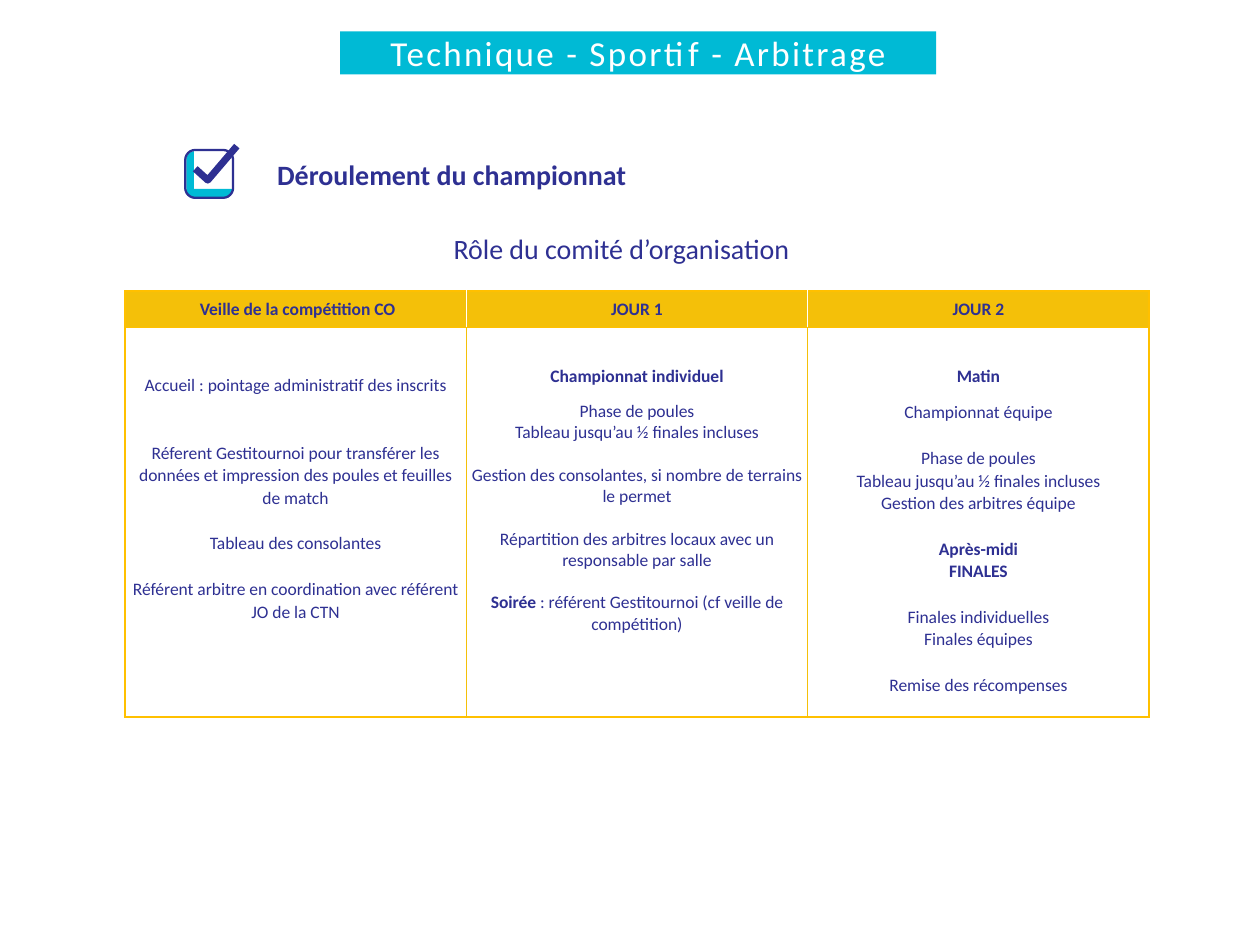
from lxml import etree
from pptx import Presentation
from pptx.dml.color import RGBColor
from pptx.enum.shapes import MSO_SHAPE
from pptx.enum.text import MSO_ANCHOR, PP_ALIGN
from pptx.oxml.ns import qn
from pptx.util import Inches, Pt

CENTER = PP_ALIGN.CENTER
MIDDLE, TOP = MSO_ANCHOR.MIDDLE, MSO_ANCHOR.TOP
NAVY = RGBColor(0x2E, 0x30, 0x92)
CYAN = RGBColor(0x00, 0xBA, 0xD5)
GOLD = RGBColor(0xF4, 0xC0, 0x09)
AMBER = RGBColor(0xFF, 0xC0, 0x00)
WHITE = RGBColor(0xFF, 0xFF, 0xFF)

HEADERS = [" Veille de la compétition CO", "JOUR 1", "JOUR 2"]
LINE = 13  # one line of body text, in points
# Each column: top margin (points), then paragraphs as (space before, line spacing, runs)
COLUMNS = [
    (2 * LINE, [
        (0, 1.07, [("Accueil : pointage administratif des inscrits", False)]),
        (2 * LINE, 1.07, [("Réferent Gestitournoi pour transférer les données et "
                           "impression des poules et feuilles de match", False)]),
        (LINE, 1.07, [("Tableau des consolantes", False)]),
        (LINE, 1.07, [("Référent arbitre en coordination avec référent JO de la CTN", False)]),
    ]),
    (LINE + 8, [
        (0, 1.07, [("Championnat individuel", True)]),
        (8, 1, [("Phase de poules", False)]),
        (0, 1, [("Tableau jusqu’au ½ finales incluses", False)]),
        (12.2, 1, [("Gestion des consolantes, si nombre de terrains le permet", False)]),
        (12.2, 1, [("Répartition des arbitres locaux avec un responsable par salle", False)]),
        (12.2, 1, [("Soirée", True),
                   (" : référent Gestitournoi (cf veille de compétition)", False)]),
    ]),
    (LINE + 8, [
        (0, 1.07, [("Matin", True)]),
        (8, 1.07, [("Championnat équipe", False)]),
        (LINE, 1.07, [("Phase de poules", False)]),
        (0, 1.07, [("Tableau jusqu’au ½ finales incluses", False)]),
        (0, 1.07, [("Gestion des arbitres équipe", False)]),
        (LINE, 1.07, [("Après-midi", True)]),
        (0, 1.07, [("FINALES", True)]),
        (LINE, 1.07, [("Finales individuelles", False)]),
        (0, 1.07, [("Finales équipes", False)]),
        (LINE, 1.07, [("Remise des récompenses", False)]),
    ]),
]


def add_span(para, text, size, color, bold=False):
    span = para.add_run()
    span.text = text
    span.font.name = "Calibri"
    span.font.size = Pt(size)
    span.font.bold = bold
    span.font.color.rgb = color
    return span


def set_borders(cell, borders):
    """Draw (color, points) borders in the order left, right, top, bottom."""
    properties = cell._tc.get_or_add_tcPr()
    for index, (side, (color, points)) in enumerate(zip("LRTB", borders)):
        line = etree.Element(qn(f"a:ln{side}"), w=str(Pt(points)))
        fill = etree.SubElement(line, qn("a:solidFill"))
        etree.SubElement(fill, qn("a:srgbClr"), val=str(color))
        properties.insert(index, line)


deck = Presentation()
deck.slide_width, deck.slide_height = Inches(10), Inches(7.5)
page = deck.slides.add_slide(deck.slide_layouts[6])

# Programme table
table = page.shapes.add_table(2, 3, Inches(0.99), Inches(2.31), Inches(8.13), Inches(3.38)).table
table.first_row = table.horz_banding = False
table.rows[0].height, table.rows[1].height = Inches(0.29), Inches(3.09)
for column in table.columns:
    column.width = Inches(2.71)

header_rows = [(0, [(0, 1.07, [(header, True)])]) for header in HEADERS]
for row, contents in enumerate([header_rows, COLUMNS]):
    inner = (WHITE if row == 0 else GOLD, 0.5)
    outer = (AMBER, 1)
    for col, (top_margin, paragraphs) in enumerate(contents):
        cell = table.cell(row, col)
        cell.margin_left = cell.margin_right = Inches(0.04)
        cell.margin_top, cell.margin_bottom = Pt(top_margin), 0
        cell.vertical_anchor = MIDDLE if row == 0 else TOP
        if row == 0:
            cell.fill.solid()
            cell.fill.fore_color.rgb = GOLD
        else:
            cell.fill.background()
        set_borders(cell, [outer if col == 0 else inner,
                           outer if col == 2 else inner, outer, outer])
        for index, (before, spacing, runs) in enumerate(paragraphs):
            frame = cell.text_frame
            para = frame.paragraphs[0] if index == 0 else frame.add_paragraph()
            para.alignment = CENTER
            para.line_spacing = spacing
            para.space_before = Pt(before)
            for text, bold in runs:
                add_span(para, text, 10, NAVY, bold)

# Checkbox icon: cyan shade, rounded frame, tick; points in hundredths of an inch
SHADE = [(154, 120), (151, 121), (149, 123), (148, 126), (148, 154), (149, 155),
         (151, 156), (153, 157), (181, 157), (184, 153), (185, 150), (154, 150)]
TICK = [(155, 134), (165, 143), (188, 116)]
icon = page.shapes.add_group_shape()
outlines = []
for points, closed in [(SHADE, True), (TICK, False)]:
    builder = icon.shapes.build_freeform(*points[0], scale=Inches(0.01))
    builder.add_line_segments(points[1:], close=closed)
    outlines.append(builder.convert_to_shape())
shade, tick = outlines
frame_box = icon.shapes.add_shape(MSO_SHAPE.ROUNDED_RECTANGLE, Inches(1.47), Inches(1.19),
                                  Inches(0.38), Inches(0.38))
frame_box.adjustments[0] = 0.21
shade.shadow.inherit = False
shade.fill.solid()
shade.fill.fore_color.rgb = CYAN
shade.line.fill.background()
for outline, width in [(frame_box, 1.3), (tick, 4)]:
    outline.shadow.inherit = False
    outline.fill.background()
    outline.line.color.rgb = NAVY
    outline.line.width = Pt(width)

# Title band
band = page.shapes.add_shape(MSO_SHAPE.RECTANGLE, Inches(2.7), Inches(0.25),
                             Inches(4.73), Inches(0.34))
band.shadow.inherit = False
band.fill.solid()
band.fill.fore_color.rgb = CYAN
band.line.fill.background()
frame = band.text_frame
frame.margin_left = frame.margin_right = frame.margin_top = frame.margin_bottom = 0
frame.vertical_anchor = TOP
frame.word_wrap = True
para = frame.paragraphs[0]
para.alignment = CENTER
title = add_span(para, "Technique - Sportif - Arbitrage", 20, WHITE)
title.font._element.set("spc", "130")

# Headings
for left, top, text, bold in [(2.19, 1.24, "Déroulement du championnat", True),
                              (3.59, 1.83, "Rôle du comité d’organisation", False)]:
    box = page.shapes.add_textbox(Inches(left), Inches(top), Inches(2.81), Inches(0.28))
    frame = box.text_frame
    frame.word_wrap = True
    frame.margin_left = frame.margin_top = Inches(0.01)
    frame.margin_right = frame.margin_bottom = 0
    add_span(frame.paragraphs[0], text, 16, NAVY, bold)

deck.save("out.pptx")
